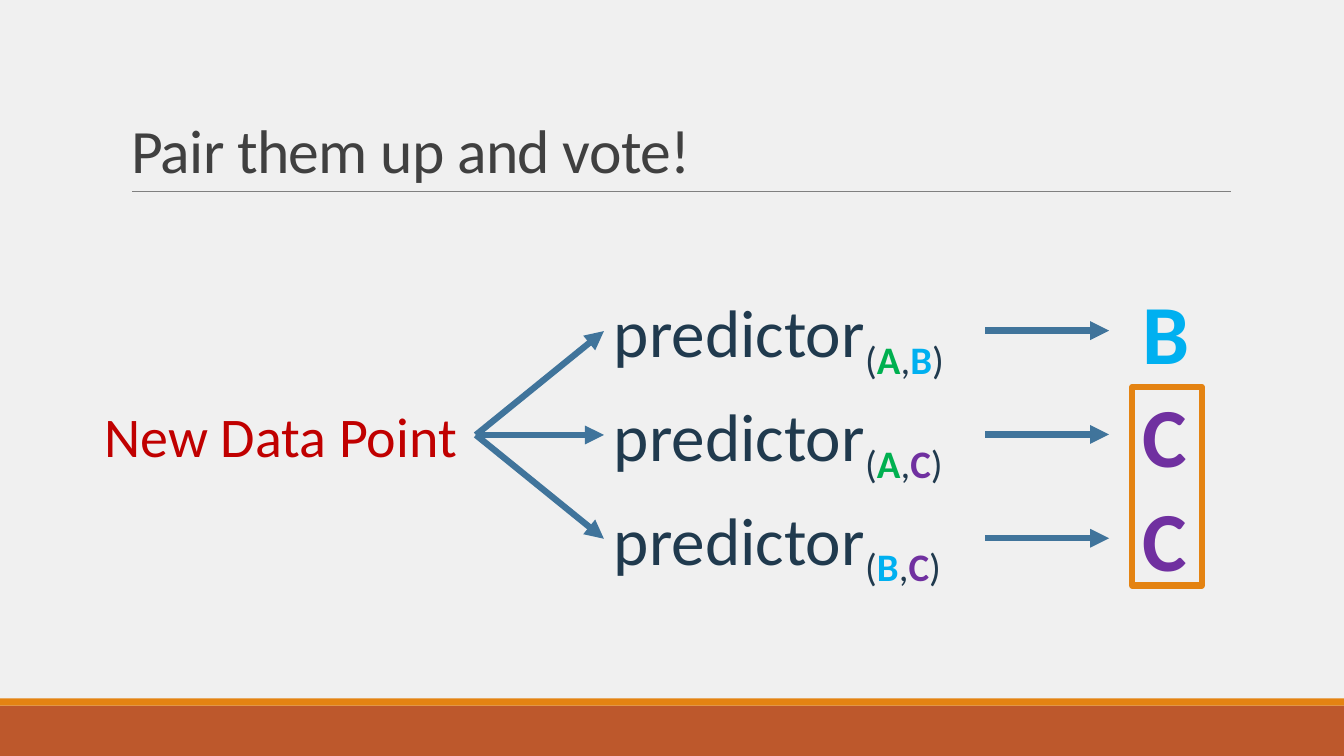
import pptx
import pptx.util
import pptx.dml.color
import pptx.enum.shapes
import pptx.enum.text
import lxml.etree
from pptx.oxml.ns import qn

Inches = pptx.util.Inches
RGBColor = pptx.dml.color.RGBColor
SHAPES = pptx.enum.shapes.MSO_SHAPE
STRAIGHT = pptx.enum.shapes.MSO_CONNECTOR.STRAIGHT

BACKGROUND = RGBColor(0xF0, 0xF0, 0xF0)
RUST = RGBColor(0xBD, 0x58, 0x2C)
ORANGE = RGBColor(0xE4, 0x83, 0x12)
GRAY = RGBColor(0x80, 0x80, 0x80)
CHARCOAL = RGBColor(0x40, 0x40, 0x40)
NAVY = RGBColor(0x20, 0x3A, 0x4E)
STEEL = RGBColor(0x40, 0x74, 0x9B)
RED = RGBColor(0xC0, 0x00, 0x00)
CLASS_COLORS = {
    "A": RGBColor(0x00, 0xB0, 0x50),
    "B": RGBColor(0x00, 0xB0, 0xF0),
    "C": RGBColor(0x70, 0x30, 0xA0),
}


def write_spans(box, texts, size, color):
    box.text_frame.word_wrap = True
    para = box.text_frame.paragraphs[0]
    for text in texts:
        span = para.add_run()
        span.text = text
        formats = {"name": "Calibri", "size": pptx.util.Pt(size), "bold": text in CLASS_COLORS}
        for key, value in formats.items():
            setattr(span.font, key, value)
        span.font.color.rgb = CLASS_COLORS.get(text, color)
    return para


def add_line(left, top, right, bottom, color, width, arrow=True):
    line = page.shapes.add_connector(
        STRAIGHT, Inches(left), Inches(top), Inches(right), Inches(bottom))
    line.line.color.rgb = color
    line.line.width = pptx.util.Pt(width)
    if arrow:
        lxml.etree.SubElement(line.line._get_or_add_ln(), qn("a:tailEnd"), type="triangle")
    lxml.etree.SubElement(line._element.spPr, qn("a:effectLst"))
    return line


deck = pptx.Presentation()
deck.slide_width = Inches(13.33)
deck.slide_height = Inches(7.5)
page = deck.slides.add_slide(deck.slide_layouts[5])
page.background.fill.solid()
page.background.fill.fore_color.rgb = BACKGROUND

for top, height, color in [(7, 0.5, RUST), (6.93, 0.07, ORANGE)]:
    band = page.shapes.add_shape(
        SHAPES.RECTANGLE, 0, Inches(top), deck.slide_width, Inches(height))
    band.shadow.inherit = False
    band.fill.solid()
    band.fill.fore_color.rgb = color
    band.line.fill.background()

add_line(1.31, 1.9, 12.21, 1.9, GRAY, 0.5, arrow=False)

title = page.shapes.title
for key, value in {"left": 1.2, "top": 0.31, "width": 11, "height": 1.59}.items():
    setattr(title, key, Inches(value))
title.text_frame.auto_size = pptx.enum.text.MSO_AUTO_SIZE.NONE
title.text_frame.vertical_anchor = pptx.enum.text.MSO_ANCHOR.BOTTOM
para = write_spans(title, ["Pair them up and vote!"], 44, CHARCOAL)
para.alignment = pptx.enum.text.PP_ALIGN.LEFT
para.line_spacing = 0.85
para.runs[0].font._element.set("spc", "-50")

data_point = page.shapes.add_textbox(Inches(0.94), Inches(3.93), Inches(3.78), Inches(0.77))
write_spans(data_point, ["New Data Point"], 40, RED)

votes = [("A", "B", "B"), ("A", "C", "C"), ("B", "C", "C")]
for row, (first, second, winner) in enumerate(votes):
    middle = 3.28 + row * 1.03
    predictor = page.shapes.add_textbox(
        Inches(5.99), Inches(middle - 0.45), Inches(4.19), Inches(0.91))
    para = write_spans(predictor, ["predictor", "(", first, ",", second, ")"], 48, NAVY)
    for span in para.runs[1:]:
        span.font._element.set("baseline", "-25000")

    branch = add_line(4.72, 4.31, 5.99, middle, STEEL, 4.5)
    branch.begin_connect(data_point, 3)
    branch.end_connect(predictor, 1)

    vote = page.shapes.add_textbox(
        Inches(11.23), Inches(middle - 0.55), Inches(0.69), Inches(1.11))
    write_spans(vote, [winner], 60, NAVY)
    add_line(9.77, middle, 11, middle, STEEL, 4.5)

majority = page.shapes.add_shape(
    SHAPES.RECTANGLE, Inches(11.23), Inches(3.84), Inches(0.69), Inches(1.97))
majority.shadow.inherit = False
majority.fill.background()
majority.line.color.rgb = ORANGE
majority.line.width = pptx.util.Pt(4.5)

deck.save("out.pptx")
